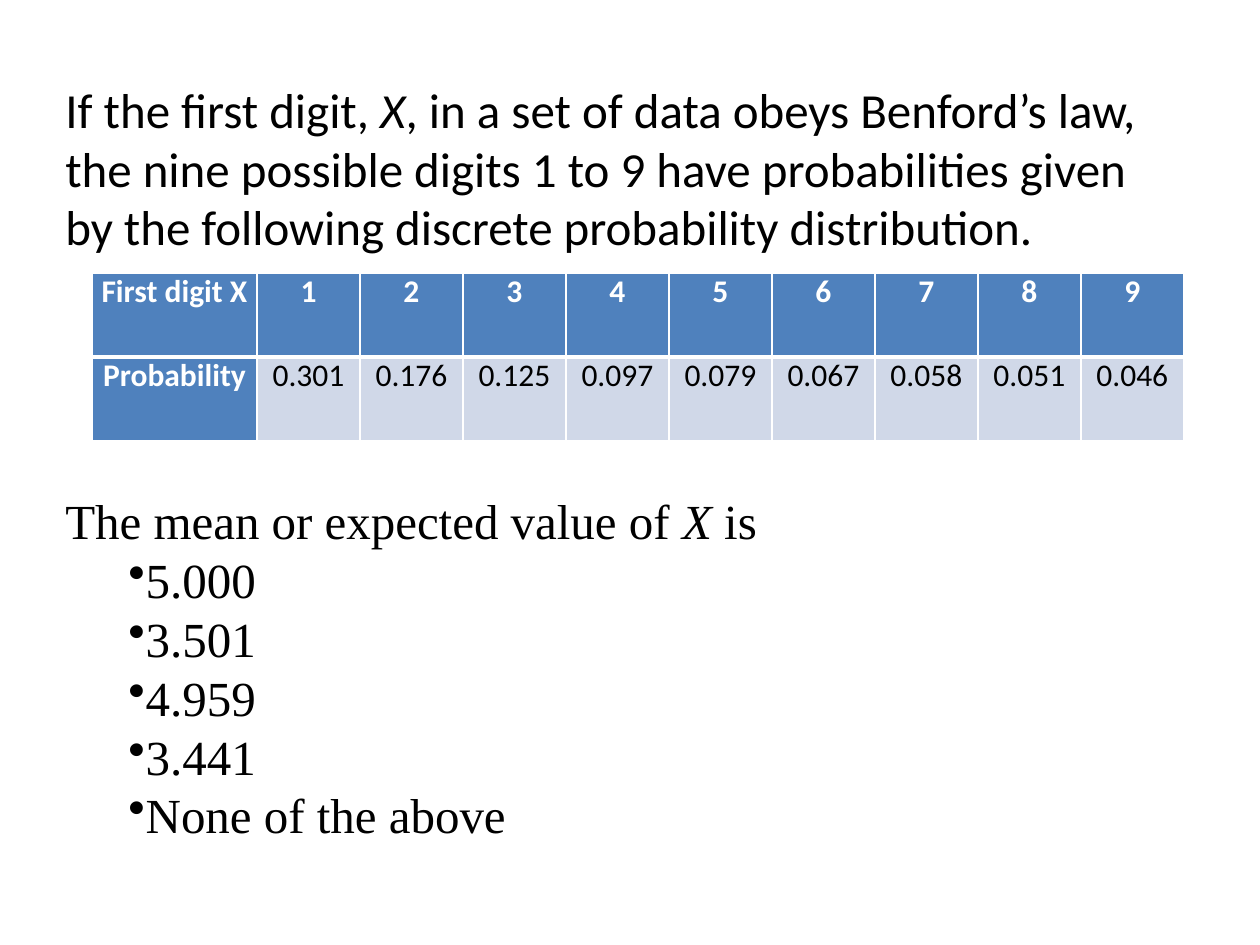
from lxml import etree
from pptx import Presentation
from pptx import util as u
from pptx.dml.color import RGBColor
from pptx.enum import text
from pptx.oxml import ns

WHITE = RGBColor(0xFF, 0xFF, 0xFF)
BLACK = RGBColor(0, 0, 0)
BLUE = RGBColor(0x4F, 0x81, 0xBD)
PALE_BLUE = RGBColor(0xD0, 0xD8, 0xE8)
EMU_PER_PX = 914400 / 126

HEADING = {"size": u.Pt(18), "name": "Calibri", "bold": True}
VALUE = {**HEADING, "bold": False}
QUESTION = {"size": u.Pt(28), "name": "Calibri"}
ANSWER = {**QUESTION, "name": "Times New Roman"}
LINE = u.Pt(33.6)


def px(length):
    return u.Emu(round(length * EMU_PER_PX))


def apply(target, values):
    for key, value in values.items():
        setattr(target, key, value)


class Quiz:
    def __init__(self, deck):
        self.slide = deck.slides.add_slide(deck.slide_layouts[6])

    def words(self, paragraph, wording, style, color, italic=False):
        run = paragraph.add_run()
        run.text = wording
        apply(run.font, {**style, "italic": italic})
        run.font.color.rgb = color

    def border(self, cell, bottom):
        properties = cell._tc.get_or_add_tcPr()
        widths = {"lnL": 1, "lnR": 1, "lnT": 1, "lnB": bottom}
        for place, (side, width) in enumerate(widths.items()):
            edge = etree.Element(ns.qn(f"a:{side}"), w=str(u.Pt(width)))
            fill = etree.SubElement(edge, ns.qn("a:solidFill"))
            etree.SubElement(fill, ns.qn("a:srgbClr"), val=str(WHITE))
            properties.insert(place, edge)

    def table(self, rows, left, top, widths, row_height):
        distribution = self.slide.shapes.add_table(
            len(rows), len(widths), px(left), px(top),
            px(sum(widths)), px(row_height * len(rows))).table
        for column, width in zip(distribution.columns, widths):
            column.width = px(width)
        for r, row in enumerate(rows):
            for c, wording in enumerate(row):
                cell = distribution.cell(r, c)
                heading = r == 0 or c == 0
                apply(cell, {"margin_left": px(9), "margin_right": px(9),
                             "margin_top": 0, "margin_bottom": 0})
                cell.fill.solid()
                cell.fill.fore_color.rgb = BLUE if heading else PALE_BLUE
                self.border(cell, 3 if r == 0 else 1)
                line = cell.text_frame.paragraphs[0]
                line.alignment = text.PP_ALIGN.CENTER
                self.words(line, wording, HEADING if heading else VALUE,
                           WHITE if heading else BLACK)

    def text_box(self, left, top, width, height):
        frame = self.slide.shapes.add_textbox(
            px(left), px(top), px(width), px(height)).text_frame
        apply(frame, {"word_wrap": True,
                      "vertical_anchor": text.MSO_ANCHOR.MIDDLE})
        return frame

    def sentence(self, paragraph, before, variable, after, style, gap=0):
        apply(paragraph, {"line_spacing": LINE, "space_before": u.Emu(gap)})
        self.words(paragraph, before, style, BLACK)
        self.words(paragraph, variable, style, BLACK, italic=True)
        self.words(paragraph, after, style, BLACK)

    def choice(self, paragraph, wording):
        apply(paragraph, {"level": 1, "line_spacing": LINE})
        properties = paragraph._p.get_or_add_pPr()
        properties.set("marL", str(px(63)))
        properties.set("indent", "0")
        etree.SubElement(properties, ns.qn("a:buChar"), char="•")
        self.words(paragraph, wording, ANSWER, BLACK)


def main():
    deck = Presentation()
    apply(deck, {"slide_width": px(1260), "slide_height": px(945)})
    quiz = Quiz(deck)

    digits = ["First digit X", *map(str, range(1, 10))]
    probabilities = ["Probability", "0.301", "0.176", "0.125", "0.097",
                     "0.079", "0.067", "0.058", "0.051", "0.046"]
    quiz.table([digits, probabilities], 92, 273, [165] + [103] * 9, 84)

    body = quiz.text_box(53, 69, 1134, 785)
    quiz.sentence(
        body.paragraphs[0], "If the first digit, ", "X",
        ", in a set of data obeys Benford’s law, the nine possible digits "
        "1 to 9 have probabilities given by the following discrete "
        "probability distribution.", QUESTION)
    quiz.sentence(body.add_paragraph(), "The mean or expected value of ",
                  "X", " is", ANSWER, gap=4 * LINE)
    for wording in ("5.000", "3.501", "4.959", "3.441", "None of the above"):
        quiz.choice(body.add_paragraph(), wording)

    deck.save("out.pptx")


if __name__ == "__main__":
    main()
